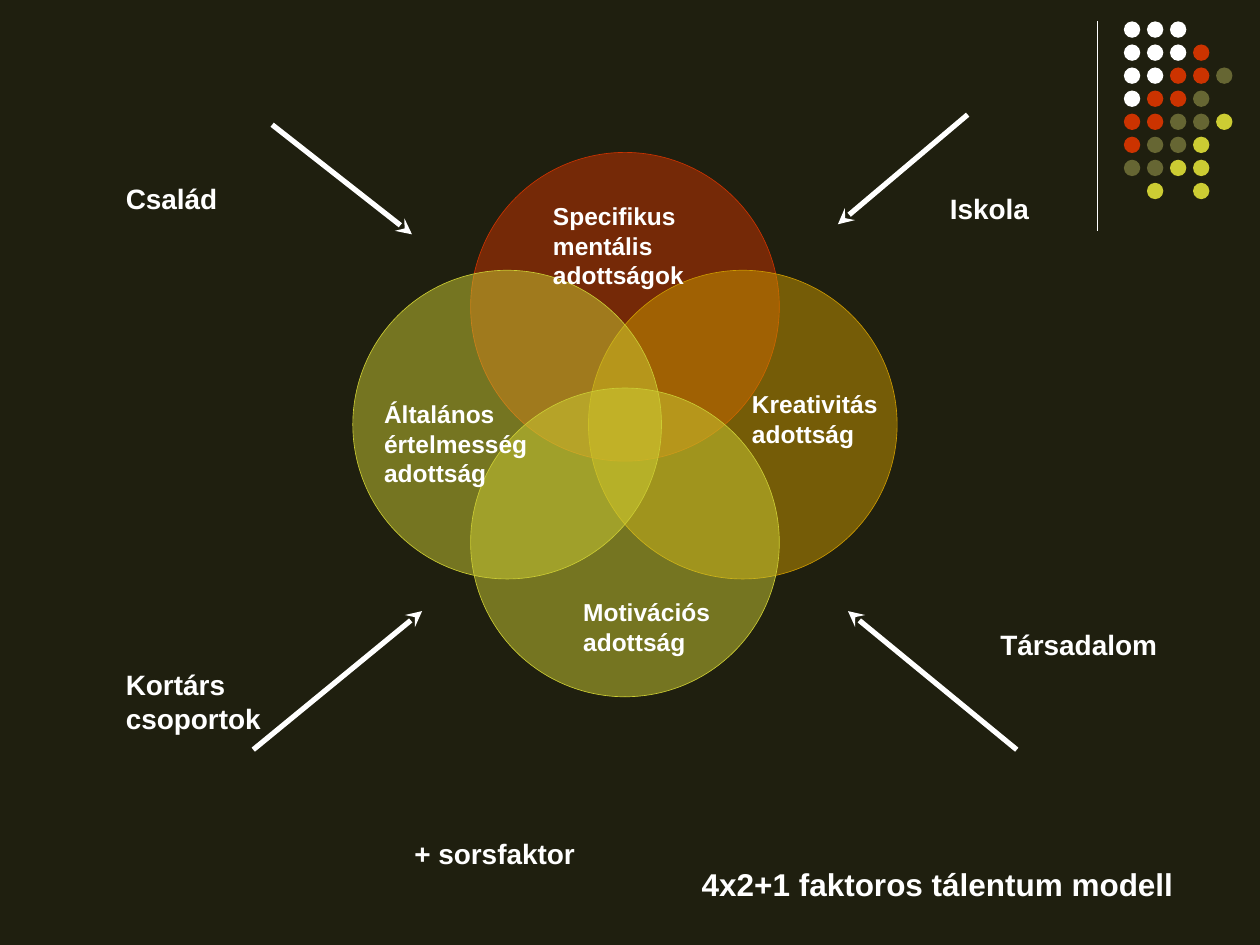
from lxml import etree
from pptx import Presentation
from pptx import util as u
from pptx.dml.color import RGBColor
from pptx.enum import shapes, text
from pptx.oxml.ns import qn

COLORS = {
    "back": "1F1F0F", "white": "FFFFFF", "red": "CC3300",
    "olive": "666633", "lime": "CCCC33", "gold": "CC9900",
}
COLS, ROWS = 100, 75


class Deck:
    font = "Arial"

    def __init__(self):
        self.prs = Presentation()
        self.prs.slide_width = u.Inches(10)
        self.prs.slide_height = u.Inches(7.5)
        self.slide = self.prs.slides.add_slide(self.prs.slide_layouts[6])
        self.paint(self.slide.background.fill, "back")

    def x(self, col):
        return round(self.prs.slide_width * col / COLS)

    def y(self, row):
        return round(self.prs.slide_height * row / ROWS)

    def paint(self, fill, name):
        fill.solid()
        fill.fore_color.rgb = RGBColor.from_string(COLORS[name])

    def disc(self, col, row, size, name, alpha=None):
        disc = self.slide.shapes.add_shape(
            shapes.MSO_SHAPE.OVAL, self.x(col), self.y(row), self.x(size), self.y(size))
        disc.shadow.inherit = False
        self.paint(disc.fill, name)
        if alpha is None:
            disc.line.fill.background()
            return
        tint = disc.fill._xPr.find(qn("a:solidFill"))[0]
        etree.SubElement(tint, qn("a:alpha"), val=str(alpha * 1000))
        self.paint(disc.line.fill, name)
        disc.line.width = u.Pt(0.37)

    def line(self, start, end, width, arrow=False):
        line = self.slide.shapes.add_connector(
            shapes.MSO_CONNECTOR.STRAIGHT,
            self.x(start[0]), self.y(start[1]), self.x(end[0]), self.y(end[1]))
        self.paint(line.line.fill, "white")
        line.line.width = u.Pt(width)
        if arrow:
            etree.SubElement(line.line._get_or_add_ln(), qn("a:tailEnd"), type="stealth")
        etree.SubElement(line._element.spPr, qn("a:effectLst"))

    def label(self, words, col, row, wide, high, size):
        box = self.slide.shapes.add_textbox(
            self.x(col), self.y(row), self.x(wide), self.y(high))
        frame = box.text_frame
        frame.word_wrap = True
        frame.auto_size = text.MSO_AUTO_SIZE.SHAPE_TO_FIT_TEXT
        run = frame.paragraphs[0].add_run()
        run.text = words
        run.font.name = self.font
        run.font.size = u.Pt(size)
        run.font.bold = True
        run.font.color.rgb = RGBColor.from_string(COLORS["white"])

    def save(self):
        self.prs.save("out.pptx")


def main():
    deck = Deck()

    deck.line((87.1, 1.7), (87.1, 18.3), 0.75)
    names = {"W": "white", "R": "red", "O": "olive", "Y": "lime"}
    dots = ["WWW", "WWWR", "WWRRO", "WRRO", "RROOY", "ROOY", "OOYY", " Y Y"]
    for row, marks in enumerate(dots):
        for col, mark in enumerate(marks):
            if mark in names:
                deck.disc(89.2 + col * 1.83, 1.7 + row * 1.83, 1.3, names[mark])

    size, shift = 24.5, 9.35
    left, top = 37.35, 21.45
    petals = [(0, -1, "red"), (1, 0, "gold"), (0, 1, "lime"), (-1, 0, "lime")]
    for dx, dy, name in petals:
        deck.disc(left + dx * shift, top + dy * shift, size, name, 50)

    gifts = [
        ("Specifikus mentális adottságok", 42.9, 15.5, 16.5, 8),
        ("Kreativitás adottság", 58.7, 30.4, 13.4, 5.7),
        ("Motivációs adottság", 45.3, 46.9, 15.8, 5.7),
        ("Általános értelmesség adottság", 29.5, 31.2, 13.4, 8),
    ]
    for gift in gifts:
        deck.label(*gift, 14)

    arrows = [
        ((21.6, 9.9), (32.7, 18.6)),
        ((76.8, 9.1), (66.5, 17.8)),
        ((20.1, 59.5), (33.5, 48.5)),
        ((80.7, 59.5), (67.3, 48.5)),
    ]
    for start, end in arrows:
        deck.line(start, end, 3, arrow=True)

    factors = [
        ("Kortárs csoportok", 9, 52.5, 14.2, 6.4),
        ("Társadalom", 78.4, 49.3, 16.5, 3.7),
        ("Iskola", 74.4, 14.7, 12.6, 3.7),
        ("Család", 9, 13.9, 15.8, 3.7),
        ("+ sorsfaktor", 31.9, 65.9, 30.7, 3.7),
    ]
    for factor in factors:
        deck.label(*factor, 16)
    deck.label("4x2+1 faktoros tálentum modell", 54.7, 68.2, 42.5, 4, 18)

    deck.save()


if __name__ == "__main__":
    main()
